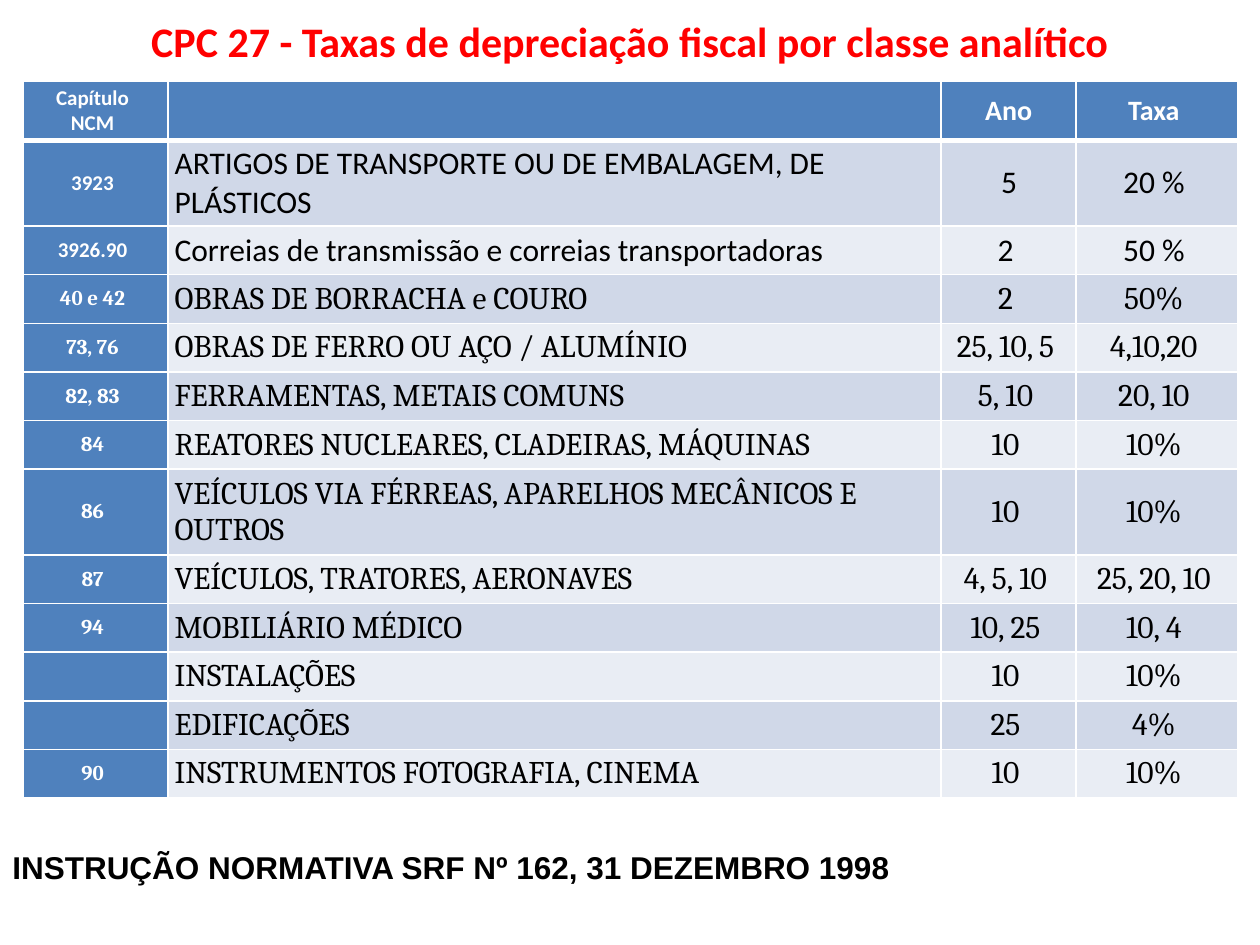
from dataclasses import dataclass

import pptx
import pptx.dml.color
import pptx.enum.text
import pptx.oxml
import pptx.oxml.ns
import pptx.table
import pptx.text.text
import pptx.util
from pptx.dml.color import RGBColor
from pptx.enum.text import MSO_ANCHOR, PP_ALIGN
from pptx.util import Cm

RED = RGBColor(0xFF, 0x00, 0x00)
BLACK = RGBColor(0x00, 0x00, 0x00)
WHITE = RGBColor(0xFF, 0xFF, 0xFF)
HEADER_BLUE = RGBColor(0x4F, 0x81, 0xBD)
BAND_DARK = RGBColor(0xD0, 0xD8, 0xE8)
BAND_LIGHT = RGBColor(0xE9, 0xED, 0xF4)

HEADER_HEIGHT, SINGLE_HEIGHT, DOUBLE_HEIGHT = Cm(1.19), Cm(0.98), Cm(1.73)
COLUMN_WIDTHS = [Cm(2.93), Cm(15.58), Cm(2.72), Cm(3.26)]


@dataclass
class RateRow:
    chapter: str
    description: str
    years: str
    rate: str
    font: str = "Cambria"
    height: int = SINGLE_HEIGHT


@dataclass
class TextStyle:
    font: str
    size: int
    color: RGBColor
    bold: bool
    alignment: PP_ALIGN = PP_ALIGN.CENTER


RATES = [
    RateRow("Capítulo\vNCM", "", " Ano", "Taxa", "Calibri", HEADER_HEIGHT),
    RateRow("3923", "ARTIGOS DE TRANSPORTE OU DE EMBALAGEM, DE PLÁSTICOS", " 5", "20 %", "Calibri", DOUBLE_HEIGHT),
    RateRow("3926.90", "Correias de transmissão e correias transportadoras", "2", "50 %", "Calibri"),
    RateRow("40 e 42", "OBRAS DE BORRACHA e COURO", "2", "50%"),
    RateRow("73, 76", "OBRAS DE FERRO OU AÇO / ALUMÍNIO", "25, 10, 5", "4,10,20"),
    RateRow("82, 83", "FERRAMENTAS, METAIS COMUNS", "5, 10", "20, 10"),
    RateRow("84", "REATORES NUCLEARES, CLADEIRAS, MÁQUINAS", "10", "10%"),
    RateRow("86", "VEÍCULOS VIA FÉRREAS, APARELHOS MECÂNICOS E OUTROS", "10", "10%", height=DOUBLE_HEIGHT),
    RateRow("87", "VEÍCULOS, TRATORES, AERONAVES", "4, 5, 10", "25, 20, 10"),
    RateRow("94", "MOBILIÁRIO MÉDICO", "10, 25", "10, 4"),
    RateRow("", "INSTALAÇÕES", "10", "10%"),
    RateRow("", "EDIFICAÇÕES", "25", "4%"),
    RateRow("90", "INSTRUMENTOS FOTOGRAFIA, CINEMA", "10", "10%"),
]


def write_text(frame: pptx.text.text.TextFrame, text: str, style: TextStyle) -> None:
    frame.text = text
    frame.word_wrap = True
    paragraph = frame.paragraphs[0]
    paragraph.alignment = style.alignment
    paragraph.font.name = style.font
    paragraph.font.size = pptx.util.Pt(style.size)
    paragraph.font.bold = style.bold
    paragraph.font.color.rgb = style.color


def add_borders(cell: pptx.table._Cell, top: int, bottom: int) -> None:
    properties = cell._tc.get_or_add_tcPr()
    sides = [("lnL", 1), ("lnR", 1), ("lnT", top), ("lnB", bottom)]
    for position, (side, width) in enumerate(sides):
        border = pptx.oxml.parse_xml(
            f'<a:{side} {pptx.oxml.ns.nsdecls("a")} w="{pptx.util.Pt(width)}">'
            f'<a:solidFill><a:srgbClr val="{WHITE}"/></a:solidFill></a:{side}>'
        )
        properties.insert(position, border)


def cell_style(row: int, column: int, font: str) -> TextStyle:
    if column == 0:
        return TextStyle(font, 12, WHITE, True)
    if row == 0:
        return TextStyle(font, 16, WHITE, True)
    alignment = PP_ALIGN.LEFT if column == 1 else PP_ALIGN.CENTER
    return TextStyle(font, 18, BLACK, False, alignment)


def cell_fill(row: int, column: int) -> RGBColor:
    if row == 0 or column == 0:
        return HEADER_BLUE
    return BAND_DARK if row % 2 else BAND_LIGHT


def fill_cell(table: pptx.table.Table, row: int, column: int, text: str, font: str) -> None:
    cell = table.cell(row, column)
    cell.vertical_anchor = MSO_ANCHOR.MIDDLE
    cell.margin_left, cell.margin_right = Cm(0.13), Cm(0.25)
    cell.margin_top = cell.margin_bottom = Cm(0.09)
    write_text(cell.text_frame, text, cell_style(row, column, font))
    cell.fill.solid()
    cell.fill.fore_color.rgb = cell_fill(row, column)
    add_borders(cell, top=3 if row == 1 else 1, bottom=3 if row == 0 else 1)


def add_rate_table(slide: pptx.slide.Slide) -> None:
    height = sum(rate.height for rate in RATES)
    table = slide.shapes.add_table(
        len(RATES), len(COLUMN_WIDTHS), Cm(0.46), Cm(1.63), sum(COLUMN_WIDTHS), height
    ).table
    for column, width in enumerate(COLUMN_WIDTHS):
        table.columns[column].width = width
    for row, rate in enumerate(RATES):
        table.rows[row].height = rate.height
        texts = [rate.chapter, rate.description, rate.years, rate.rate]
        for column, text in enumerate(texts):
            fill_cell(table, row, column, text, rate.font)


def main() -> None:
    presentation = pptx.Presentation()
    presentation.slide_width, presentation.slide_height = Cm(25.4), Cm(19.05)
    slide = presentation.slides.add_slide(presentation.slide_layouts[5])

    title = slide.shapes.title
    title.left, title.top, title.width, title.height = Cm(1.27), Cm(0), Cm(22.86), Cm(1.63)
    write_text(
        title.text_frame,
        "CPC 27 - Taxas de depreciação fiscal por classe analítico",
        TextStyle("Calibri", 24, RED, True),
    )
    title.text_frame.vertical_anchor = MSO_ANCHOR.MIDDLE

    regulation = slide.shapes.add_textbox(Cm(0), Cm(16.97), Cm(21.34), Cm(1.02))
    write_text(
        regulation.text_frame,
        "INSTRUÇÃO NORMATIVA SRF Nº 162, 31 DEZEMBRO 1998",
        TextStyle("Arial", 18, BLACK, True, PP_ALIGN.LEFT),
    )

    add_rate_table(slide)
    presentation.save("out.pptx")


if __name__ == "__main__":
    main()
